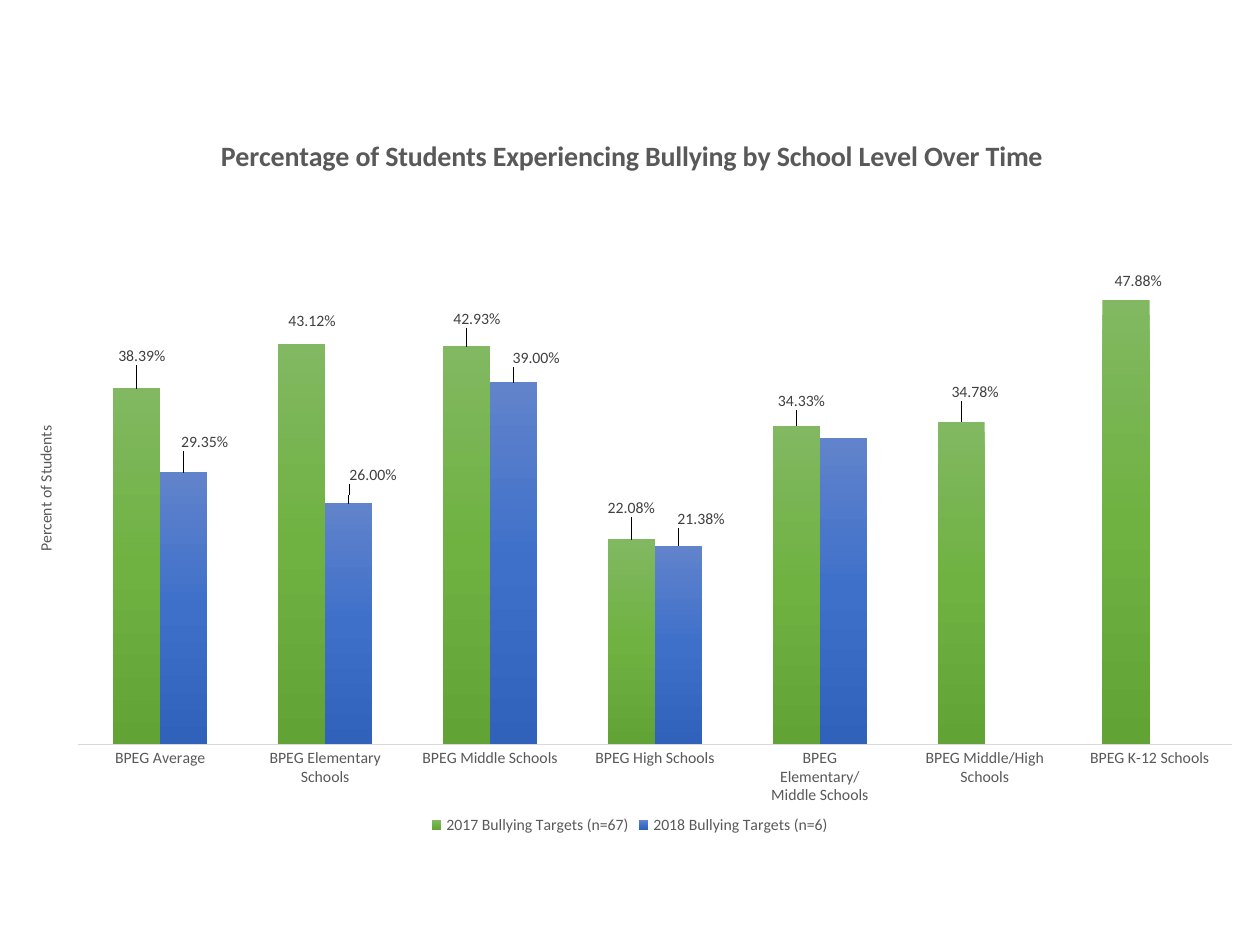
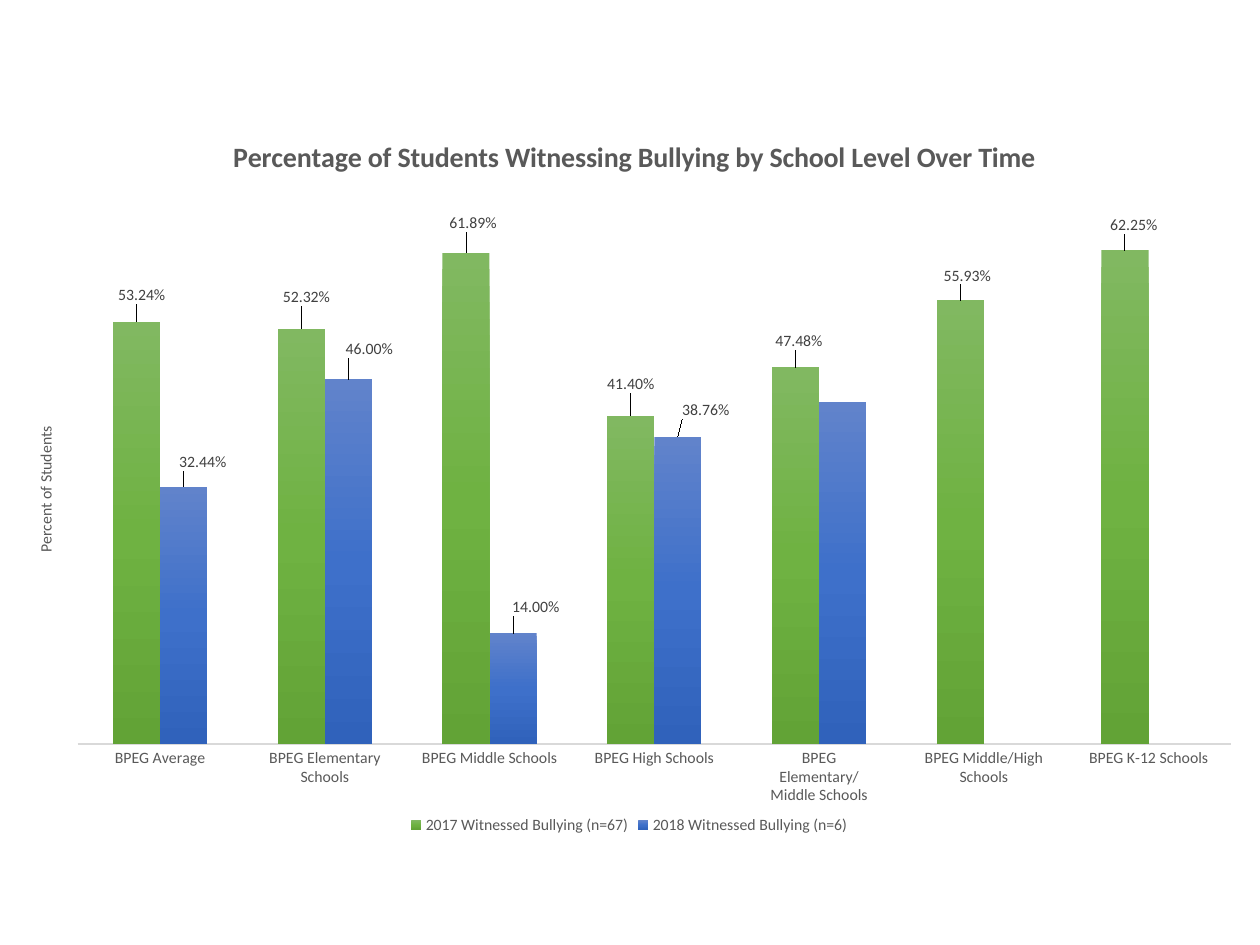
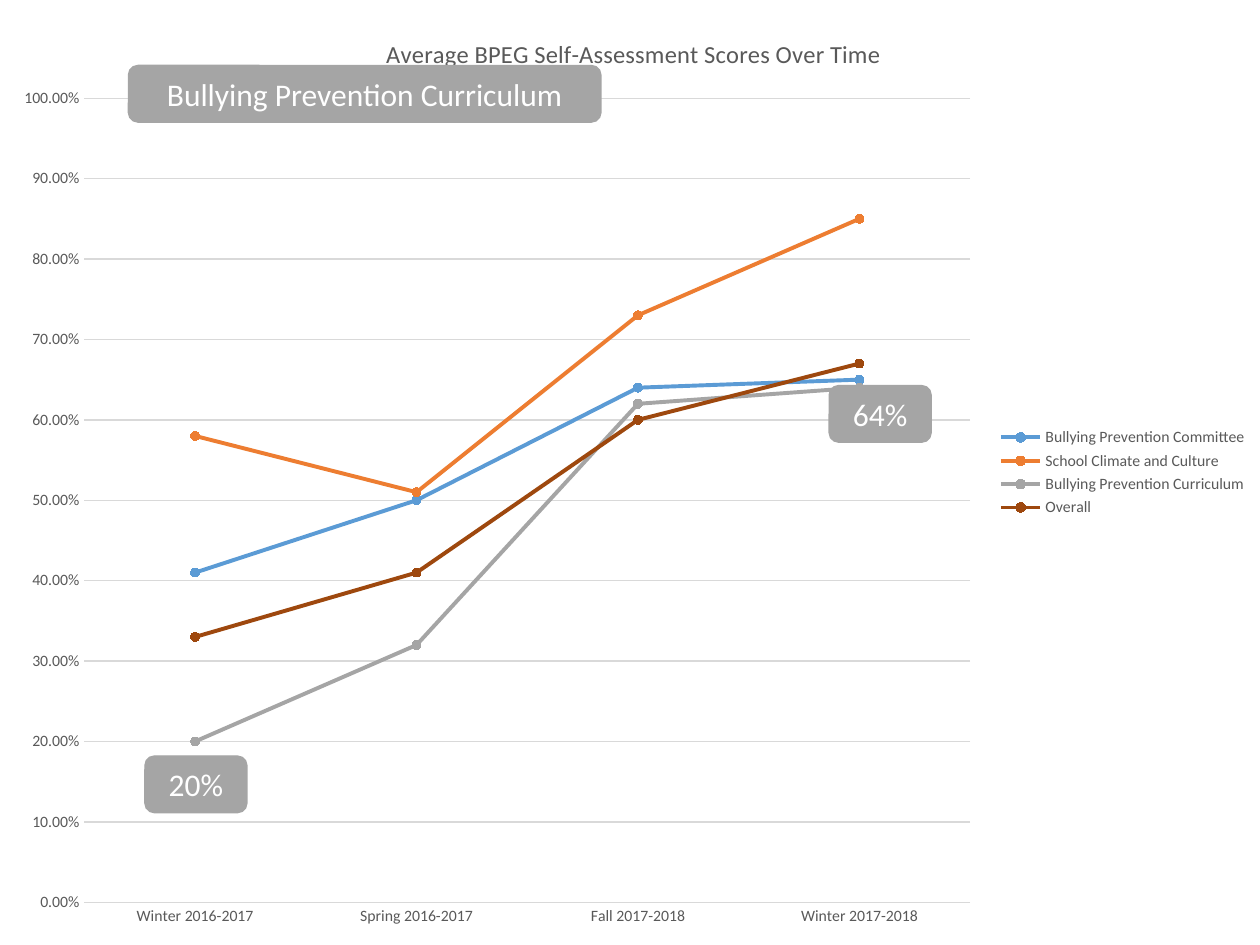
import copy

import lxml.etree
import pptx
import pptx.chart.data
import pptx.dml.color
import pptx.enum.chart
import pptx.enum.shapes
import pptx.enum.text
import pptx.oxml.ns
import pptx.util

Pt = pptx.util.Pt
RGBColor = pptx.dml.color.RGBColor
qn = pptx.oxml.ns.qn
ChartType = pptx.enum.chart.XL_CHART_TYPE
LegendPosition = pptx.enum.chart.XL_LEGEND_POSITION

FONT = "Calibri"
PERCENT = "0.00%"
WHITE = RGBColor(0xFF, 0xFF, 0xFF)
TEXT_GREY = RGBColor(0x59, 0x59, 0x59)
LABEL_GREY = RGBColor(0x40, 0x40, 0x40)
RULE_GREY = RGBColor(0xD9, 0xD9, 0xD9)
BLUE = RGBColor(0x5B, 0x9B, 0xD5)
ORANGE = RGBColor(0xED, 0x7D, 0x31)
GREY = RGBColor(0xA5, 0xA5, 0xA5)
BROWN = RGBColor(0x9E, 0x48, 0x0E)
GREEN_FADE = (RGBColor(0x81, 0xB8, 0x61), RGBColor(0x6F, 0xB2, 0x42), RGBColor(0x62, 0xA3, 0x36))
BLUE_FADE = (RGBColor(0x61, 0x83, 0xCB), RGBColor(0x3E, 0x70, 0xCA), RGBColor(0x30, 0x62, 0xBB))

SCHOOL_LEVELS = [
    "BPEG Average", "BPEG Elementary Schools", "BPEG Middle Schools", "BPEG High Schools",
    "BPEG Elementary/Middle Schools", "BPEG Middle/High Schools", "BPEG K-12 Schools",
]
TERMS = ["Winter 2016-2017", "Spring 2016-2017", "Fall 2017-2018", "Winter 2017-2018"]

EXPERIENCING = {
    "title": "Percentage of Students Experiencing Bullying by School Level Over Time",
    "title_left": 0.17,
    "maximum": 0.6,
    "series": [
        ("2017 Bullying Targets (n=67)",
         [0.3839, 0.4312, 0.4293, 0.2208, 0.3433, 0.3478, 0.4788],
         [(3, -10), (6, -5), (6, -7), (0, -10), (3, -6), (8, -9), (7, -3)]),
        ("2018 Bullying Targets (n=6)",
         [0.2935, 0.26, 0.39, 0.2138, 0.3306, 0, 0],
         [(12, -9), (14, -8), (13, -6), (13, -7), None, None, None]),
    ],
}
WITNESSING = {
    "title": "Percentage of Students Witnessing Bullying by School Level Over Time",
    "title_left": 0.18,
    "maximum": 0.7,
    "series": [
        ("2017 Witnessed Bullying (n=67)",
         [0.5324, 0.5232, 0.6189, 0.414, 0.4748, 0.5593, 0.6225],
         [(3, -7), (3, -10), (4, -9), (0, -10), (2, -7), (4, -6), (5, -6)]),
        ("2018 Witnessed Bullying (n=6)",
         [0.3244, 0.46, 0.14, 0.3876, 0.4317, 0, 0],
         [(11, -6), (12, -9), (13, -7), (16, -7), None, None, None]),
    ],
}
SCORES = [
    ("Bullying Prevention Committee", [0.41, 0.5, 0.64, 0.65], BLUE),
    ("School Climate and Culture", [0.58, 0.51, 0.73, 0.85], ORANGE),
    ("Bullying Prevention Curriculum", [0.2, 0.32, 0.62, 0.64], GREY),
    ("Overall", [0.33, 0.41, 0.6, 0.67], BROWN),
]


def style_font(font, size, color, bold=False):
    """Set the shared typeface with a size, colour and weight."""
    font.name = FONT
    font.size = Pt(size)
    font.color.rgb = color
    font.bold = bold


def set_layout(parent, index, **settings):
    """Give a chart part a manual layout, inserted at its child index."""
    for old_layout in parent.findall(qn("c:layout")):
        parent.remove(old_layout)
    layout = parent.makeelement(qn("c:layout"))
    manual = lxml.etree.SubElement(layout, qn("c:manualLayout"))
    for name, value in settings.items():
        lxml.etree.SubElement(manual, qn(f"c:{name}"), val=str(value))
    parent.insert(index, layout)


def set_title(owner, text, size, bold, left, top):
    """Write the title of a chart or axis at a fraction of the chart box."""
    owner.has_title = True
    title = owner.chart_title if hasattr(owner, "chart_title") else owner.axis_title
    title.text_frame.text = text
    style_font(title.text_frame.paragraphs[0].font, size, TEXT_GREY, bold)
    set_layout(title._element, 1, xMode="edge", yMode="edge", x=left, y=top)
    return title


def add_percent_chart(slide, box, chart_type, categories, series, maximum, legend_position, plot_box):
    """Add a chart with the shared fonts, axes, legend and plot area."""
    data = pptx.chart.data.CategoryChartData(number_format=PERCENT)
    data.categories = categories
    for name, values, _ in series:
        data.add_series(name, values)
    chart = slide.shapes.add_chart(chart_type, *map(Pt, box), data).chart
    chart.font.name = FONT
    chart.font.size = Pt(10)
    chart.plots[0].vary_by_categories = False
    chart.has_legend = True
    chart.legend.position = legend_position
    chart.legend.include_in_layout = False
    style_font(chart.legend.font, 9, TEXT_GREY)
    for axis in (chart.category_axis, chart.value_axis):
        axis.major_tick_mark = axis.minor_tick_mark = pptx.enum.chart.XL_TICK_MARK.NONE
        style_font(axis.tick_labels.font, 9, TEXT_GREY)
    chart.category_axis.format.line.color.rgb = RULE_GREY
    chart.category_axis.format.line.width = Pt(0.75)
    chart.value_axis.minimum_scale = 0
    chart.value_axis.maximum_scale = maximum
    chart.value_axis.major_unit = 0.1
    chart.value_axis.tick_labels.number_format = PERCENT
    chart.value_axis.tick_labels.number_format_is_linked = False
    plot_area = chart._chartSpace.find(f".//{qn('c:plotArea')}")
    set_layout(plot_area, 0, layoutTarget="inner", xMode="edge", yMode="edge",
               **dict(zip("xywh", plot_box)))
    return chart


def fade_fill(series, colors):
    """Fill the columns with a three-colour fade from top to bottom."""
    fill = series.format.fill
    fill.gradient()
    fill.gradient_angle = 270
    stop_list = series._element.find(f".//{qn('a:gsLst')}")
    stop_list.insert(1, copy.deepcopy(stop_list[0]))
    for stop, position, color in zip(fill.gradient_stops, (0, 0.5, 1), colors):
        stop.position = position
        stop.color.rgb = color


def label_columns(series, offsets, box):
    """Label the columns, moving each label by points or hiding it."""
    labels = series.data_labels
    labels.show_value = True
    labels.number_format = PERCENT
    labels.number_format_is_linked = False
    labels.position = pptx.enum.chart.XL_LABEL_POSITION.OUTSIDE_END
    style_font(labels.font, 9, LABEL_GREY)
    for index, offset in enumerate(offsets):
        label = series.points[index].data_label
        style_font(label.font, 9, LABEL_GREY)
        label.position = pptx.enum.chart.XL_LABEL_POSITION.OUTSIDE_END
        element = series._element.findall(f".//{qn('c:dLbl')}")[index]
        if offset:
            set_layout(element, 1, x=round(offset[0] / box[2], 4), y=round(offset[1] / box[3], 4))
        else:
            for child in element[1:]:
                element.remove(child)
            lxml.etree.SubElement(element, qn("c:delete"), val="1")


def add_school_level_slide(slide, box, content):
    """Fill the box with a column chart of two years by school level."""
    chart = add_percent_chart(slide, box, ChartType.COLUMN_CLUSTERED, SCHOOL_LEVELS,
                              content["series"], content["maximum"],
                              LegendPosition.BOTTOM, (0.06, 0.113, 0.92, 0.758))
    set_title(chart, content["title"], 16, True, content["title_left"], 0.037)
    chart.category_axis.format.line.width = Pt(1)
    chart.value_axis.has_major_gridlines = False
    chart.value_axis.visible = False
    set_title(chart.value_axis, "Percent of Students", 9, False, 0.024, 0.433)
    body = chart.value_axis.axis_title.text_frame._txBody.bodyPr
    body.set("rot", "-5400000")
    body.set("vert", "horz")
    plot = chart.plots[0]
    plot.gap_width = 150
    plot.overlap = 0
    for series, (_, _, offsets), colors in zip(plot.series, content["series"], (GREEN_FADE, BLUE_FADE)):
        fade_fill(series, colors)
        label_columns(series, offsets, box)


def add_callout(slide, text, left, top, width):
    """Add a grey rounded box with centred white text."""
    shape = slide.shapes.add_shape(pptx.enum.shapes.MSO_SHAPE.ROUNDED_RECTANGLE,
                                   *map(Pt, (left, top, width, 32.4)))
    shape.shadow.inherit = False
    shape.fill.solid()
    shape.fill.fore_color.rgb = GREY
    shape.line.color.rgb = GREY
    shape.line.width = Pt(0.75)
    frame = shape.text_frame
    frame.word_wrap = True
    frame.auto_size = pptx.enum.text.MSO_AUTO_SIZE.SHAPE_TO_FIT_TEXT
    frame.vertical_anchor = pptx.enum.text.MSO_ANCHOR.MIDDLE
    frame.text = text
    paragraph = frame.paragraphs[0]
    paragraph.alignment = pptx.enum.text.PP_ALIGN.CENTER
    style_font(paragraph.font, 18, WHITE)


def add_score_slide(slide, box):
    """Fill the box with the score lines and their callouts."""
    chart = add_percent_chart(slide, box, ChartType.LINE_MARKERS, TERMS, SCORES, 1,
                              LegendPosition.RIGHT, (0.067, 0.104, 0.703, 0.851))
    set_title(chart, "Average BPEG Self-Assessment Scores Over Time", 14, False, 0.303, 0.034)
    chart.value_axis.format.line.fill.background()
    gridline = chart.value_axis.major_gridlines.format.line
    gridline.color.rgb = RULE_GREY
    gridline.width = Pt(0.75)
    for series, (_, _, color) in zip(chart.plots[0].series, SCORES):
        series.smooth = False
        series.format.line.color.rgb = color
        series.format.line.width = Pt(2.25)
        marker = series.marker
        marker.style = pptx.enum.chart.XL_MARKER_STYLE.CIRCLE
        marker.size = 5
        marker.format.fill.solid()
        marker.format.fill.fore_color.rgb = color
        marker.format.line.color.rgb = color
    left, top = box[:2]
    for text, x, y, width in (
        ("20%", 82.8, 432, 58.3),
        ("64%", 473.8, 220.3, 58.3),
        ("Bullying Prevention Curriculum", 73.4, 37.4, 270),
    ):
        add_callout(slide, text, left + x, top + y, width)


def main():
    """Build the three slides and save them."""
    presentation = pptx.Presentation()
    presentation.slide_width = Pt(720)
    presentation.slide_height = Pt(540)
    blank = presentation.slide_layouts[6]
    add_school_level_slide(presentation.slides.add_slide(blank), (1.4, 59.8, 717, 419.8), EXPERIENCING)
    add_school_level_slide(presentation.slides.add_slide(blank), (1.4, 60.5, 716.4, 419), WITNESSING)
    add_score_slide(presentation.slides.add_slide(blank), (0, 0, 720, 540))
    presentation.save("out.pptx")


if __name__ == "__main__":
    main()
